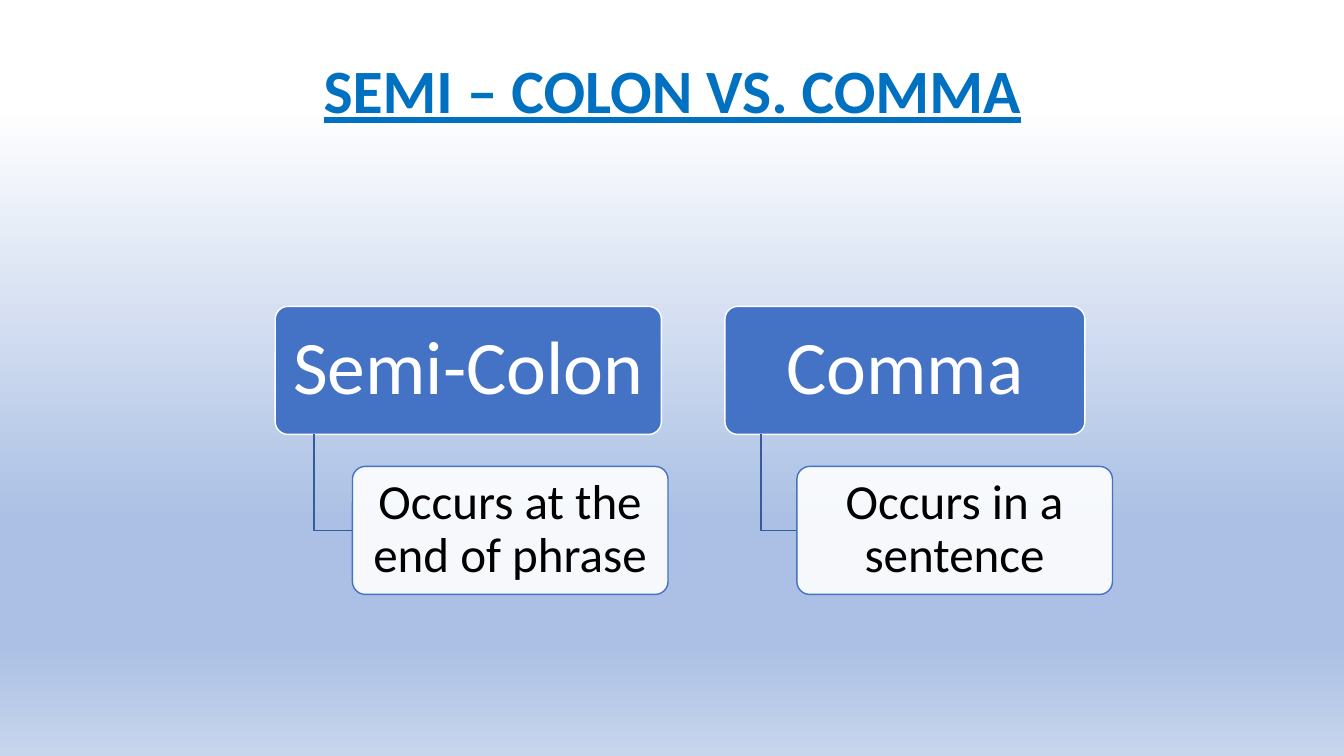
from dataclasses import dataclass

import lxml.etree
import pptx
import pptx.dml.color
import pptx.enum.shapes
import pptx.enum.text
import pptx.oxml.ns
import pptx.util

Inches = pptx.util.Inches
qn = pptx.oxml.ns.qn


@dataclass(frozen=True)
class Theme:
    font: str = "Calibri"
    title_color: str = "0070C0"
    accent: str = "4472C4"
    link: str = "365B9D"
    light: str = "FFFFFF"
    dark: str = "000000"
    title_size: int = 44
    heading_size: int = 54
    detail_size: int = 35
    line_width: int = 1
    detail_opacity: int = 90
    # Position, colour and opacity, in percent
    background: tuple = (
        (14, "FFFFFF", 64),
        (69, "ABC0E4", 100),
        (85, "ABC0E4", 100),
        (100, "C7D5ED", 100),
    )


def rgb(value):
    return pptx.dml.color.RGBColor.from_string(value)


def set_opacity(color_element, percent):
    if percent < 100:
        lxml.etree.SubElement(color_element, qn("a:alpha"), val=str(percent * 1000))


def write_text(shape, text, *, font, size, color, bold=False, underline=False,
               insets=(0.1, 0.05)):
    frame = shape.text_frame
    frame.word_wrap = True
    frame.auto_size = pptx.enum.text.MSO_AUTO_SIZE.NONE
    frame.vertical_anchor = pptx.enum.text.MSO_ANCHOR.MIDDLE
    frame.margin_left = frame.margin_right = Inches(insets[0])
    frame.margin_top = frame.margin_bottom = Inches(insets[1])
    paragraph = frame.paragraphs[0]
    paragraph.alignment = pptx.enum.text.PP_ALIGN.CENTER
    paragraph.line_spacing = 0.9
    run = paragraph.add_run()
    run.text = text
    run.font.name = font
    run.font.size = pptx.util.Pt(size)
    run.font.color.rgb = rgb(color)
    run.font.bold = bold
    run.font.underline = underline


class SlideBuilder:
    def __init__(self, presentation, theme):
        self.theme = theme
        self.slide = presentation.slides.add_slide(presentation.slide_layouts[5])

    def background(self):
        fill = self.slide.background.fill
        fill.gradient()
        fill.gradient_angle = 270
        stop_list = self.slide.element.find(".//" + qn("a:gsLst"))
        for stop in list(stop_list):
            stop_list.remove(stop)
        for position, color, opacity in self.theme.background:
            stop = lxml.etree.SubElement(stop_list, qn("a:gs"), pos=str(position * 1000))
            color_element = lxml.etree.SubElement(stop, qn("a:srgbClr"), val=color)
            set_opacity(color_element, opacity)

    def title(self, text, left, top, width, height):
        title = self.slide.shapes.title
        title.left, title.top = Inches(left), Inches(top)
        title.width, title.height = Inches(width), Inches(height)
        write_text(title, text, font=self.theme.font, size=self.theme.title_size,
                   color=self.theme.title_color, bold=True, underline=True)

    def outline(self, shape, color):
        shape.shadow.inherit = False
        shape.line.color.rgb = rgb(color)
        shape.line.width = pptx.util.Pt(self.theme.line_width)

    def box(self, text, left, top, width, height, *, fill, line, opacity=100, **text_format):
        shape = self.slide.shapes.add_shape(
            pptx.enum.shapes.MSO_SHAPE.ROUNDED_RECTANGLE,
            Inches(left), Inches(top), Inches(width), Inches(height))
        shape.adjustments[0] = 0.1
        shape.fill.solid()
        shape.fill.fore_color.rgb = rgb(fill)
        set_opacity(shape.element.spPr.find(qn("a:solidFill"))[0], opacity)
        self.outline(shape, line)
        write_text(shape, text, font=self.theme.font, **text_format)

    def elbow(self, left, top, right, bottom):
        builder = self.slide.shapes.build_freeform(Inches(left), Inches(top))
        builder.add_line_segments(
            [(Inches(left), Inches(bottom)), (Inches(right), Inches(bottom))], close=False)
        shape = builder.convert_to_shape()
        shape.fill.background()
        self.outline(shape, self.theme.link)

    def branch(self, heading, detail, left, width):
        """Draw a heading with its detail hanging below, indented by a fifth."""
        theme = self.theme
        top, height, detail_width = 3.04, 1.27, 3.13
        detail_top = top + height * 1.25
        detail_left = left + width / 5
        self.box(heading, left, top, width, height, fill=theme.accent, line=theme.light,
                 size=theme.heading_size, color=theme.light, insets=(0.11, 0.07))
        self.elbow(left + width / 10, top + height, detail_left, detail_top + height / 2)
        self.box(detail, detail_left, detail_top, detail_width, height,
                 fill=theme.light, line=theme.accent, opacity=theme.detail_opacity,
                 size=theme.detail_size, color=theme.dark, insets=(0.07, 0.05))


def main():
    presentation = pptx.Presentation()
    presentation.slide_width = Inches(13.33)
    presentation.slide_height = Inches(7.5)
    builder = SlideBuilder(presentation, Theme())

    # Background and title
    builder.background()
    builder.title("SEMI – COLON VS. COMMA", 0.92, 0.35, 11.5, 1.16)

    # Comparison branches
    builder.branch("Semi-Colon", "Occurs at the end of phrase", left=2.73, width=3.83)
    builder.branch("Comma", "Occurs in a sentence", left=7.19, width=3.57)

    presentation.save("out.pptx")


if __name__ == "__main__":
    main()
